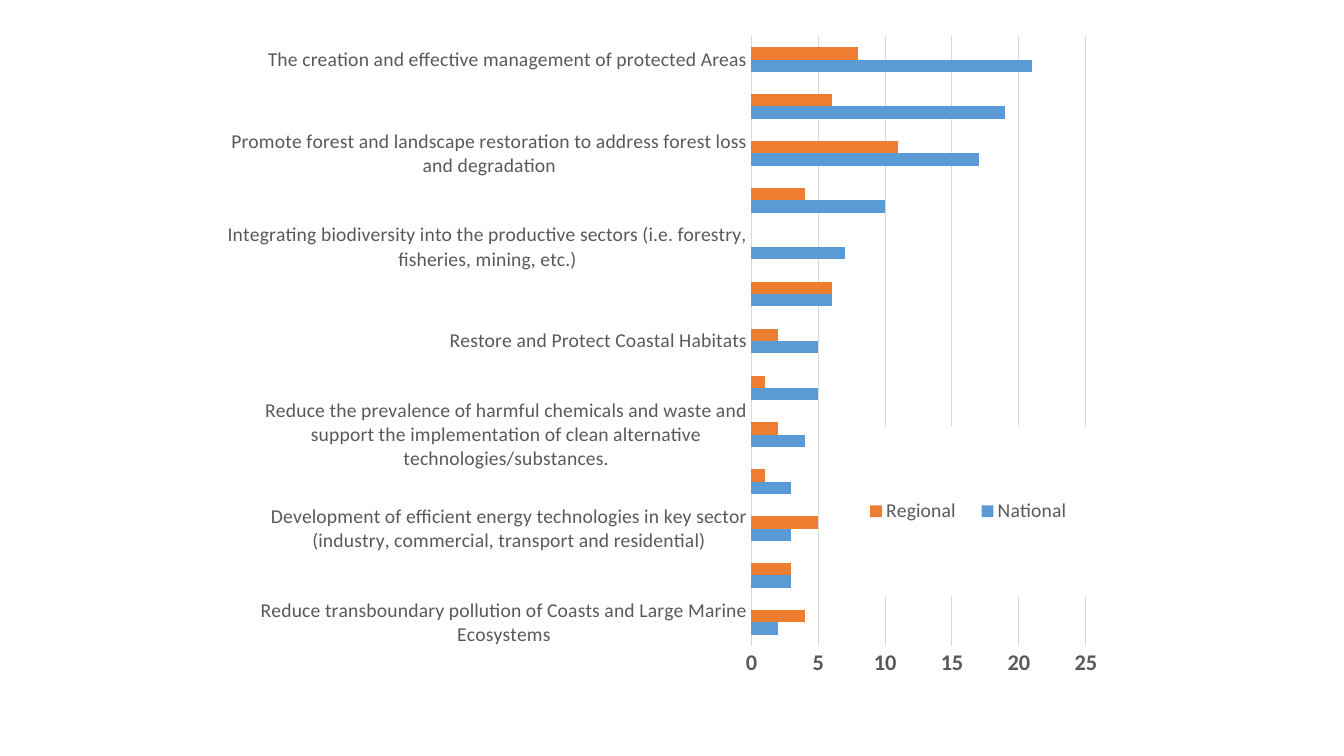
import pptx
import pptx.chart.data
import pptx.dml.color
import pptx.enum.chart
import pptx.oxml
import pptx.oxml.ns
import pptx.util

PX = 9071
GREY = "595959"
PRIORITIES = [
    ("Reduce transboundary pollution of Coasts and Large Marine Ecosystems", 2, 4),
    ("Develop the enabling conditions, tools and environment for the sound management "
     "of harmful chemicals and wastes", 3, 3),
    ("Development of efficient energy technologies in key sector "
     "(industry, commercial, transport and residential)", 3, 5),
    ("Promote transfer and development of low-carbon technologies", 3, 1),
    ("Reduce the prevalence of harmful chemicals and waste and support the "
     "implementation of clean alternative technologies/substances.", 4, 2),
    ("Enforcement of law towards protecting threatened species", 5, 1),
    ("Restore and Protect Coastal Habitats", 5, 2),
    ("Utilization of renewable energy", 6, 6),
    ("Integrating biodiversity into the productive sectors "
     "(i.e. forestry, fisheries, mining, etc.)", 7, None),
    ("Integrating Biodiversity and ecosystem services into development and finance "
     "planning (Including Natural Capital Accounting)", 10, 4),
    ("Promote forest and landscape restoration to address forest loss and degradation", 17, 11),
    ("Climate Smart Agriculture to address degradation in agricultural and "
     "rangeland systems", 19, 6),
    ("The creation and effective management of protected Areas", 21, 8),
]


def rgb(value):
    """Return the colour of a hex string."""
    return pptx.dml.color.RGBColor.from_string(value)


def set_font(font, size, bold=False):
    """Set the grey chart font at a size in points."""
    font.name = "Calibri"
    font.size = pptx.util.Pt(size)
    font.bold = bold
    font.color.rgb = rgb(GREY)


def set_line(line, color):
    """Give a line its colour and a hairline width."""
    line.color.rgb = rgb(color)
    line.width = pptx.util.Pt(0.75)


def make_layout(x, y, w, h, target=""):
    """Return a manual layout given as fractions of the chart."""
    ns = pptx.oxml.ns.nsdecls("c")
    return pptx.oxml.parse_xml(
        f'<c:layout {ns}><c:manualLayout>{target}'
        '<c:xMode val="edge"/><c:yMode val="edge"/>'
        f'<c:x val="{x}"/><c:y val="{y}"/><c:w val="{w}"/><c:h val="{h}"/>'
        '</c:manualLayout></c:layout>')


def add_legend(chart):
    """Add the white legend box over the lower right of the bars."""
    chart.has_legend = True
    legend = chart.legend
    legend.position = pptx.enum.chart.XL_LEGEND_POSITION.BOTTOM
    legend.include_in_layout = False
    set_font(legend.font, 14)
    root = chart._chartSpace
    for old in root.xpath("c:chart/c:legend/c:layout"):
        old.getparent().remove(old)
    root.xpath("c:chart/c:legend/c:legendPos")[0].addnext(
        make_layout(0.71, 0.57, 0.26, 0.24))
    root.xpath("c:chart/c:legend/c:txPr")[0].addprevious(pptx.oxml.parse_xml(
        f'<c:spPr {pptx.oxml.ns.nsdecls("c", "a")}><a:solidFill>'
        '<a:srgbClr val="FFFFFF"/></a:solidFill><a:ln><a:noFill/></a:ln></c:spPr>'))


def style_axes(chart):
    """Set the category labels, the value scale and the gridlines."""
    none = pptx.enum.chart.XL_TICK_MARK.NONE
    for axis in (chart.category_axis, chart.value_axis):
        axis.major_tick_mark = none
        axis.minor_tick_mark = none
    set_font(chart.category_axis.tick_labels.font, 14)
    set_line(chart.category_axis.format.line, "D9D9D9")
    values = chart.value_axis
    values.minimum_scale, values.maximum_scale, values.major_unit = 0, 25, 5
    set_font(values.tick_labels.font, 16, True)
    values.format.line.fill.background()
    values.has_major_gridlines = True
    set_line(values.major_gridlines.format.line, "D9D9D9")


def add_priorities_chart(s, x, y, w, h):
    """Place the bar chart of national and regional priorities in a box."""
    names, national, regional = zip(*PRIORITIES)
    data = pptx.chart.data.CategoryChartData()
    data.categories = names
    data.add_series("National", national)
    data.add_series("Regional", regional)
    chart = s.shapes.add_chart(
        pptx.enum.chart.XL_CHART_TYPE.BAR_CLUSTERED,
        *(v * PX for v in (x, y, w, h)), data).chart
    chart.has_title = False
    set_font(chart.font, 10)
    plot = chart.plots[0]
    plot.gap_width = 182
    plot.overlap = 0
    plot.vary_by_categories = False
    for series, color in zip(plot.series, ("5B9BD5", "ED7D31")):
        series.format.fill.solid()
        series.format.fill.fore_color.rgb = rgb(color)
        series.invert_if_negative = False
    style_axes(chart)
    add_legend(chart)
    area = chart._chartSpace.xpath("c:chart/c:plotArea")[0]
    for old in area.xpath("c:layout"):
        area.remove(old)
    area.insert(0, make_layout(0.6, 0.02, 0.37, 0.86,
                               '<c:layoutTarget val="inner"/>'))


def main():
    """Build the slide and save it."""
    prs = pptx.Presentation()
    prs.slide_width, prs.slide_height = 1344 * PX, 756 * PX
    s = prs.slides.add_slide(prs.slide_layouts[6])
    add_priorities_chart(s, 209, 22, 904, 709)
    prs.save("out.pptx")


if __name__ == "__main__":
    main()
